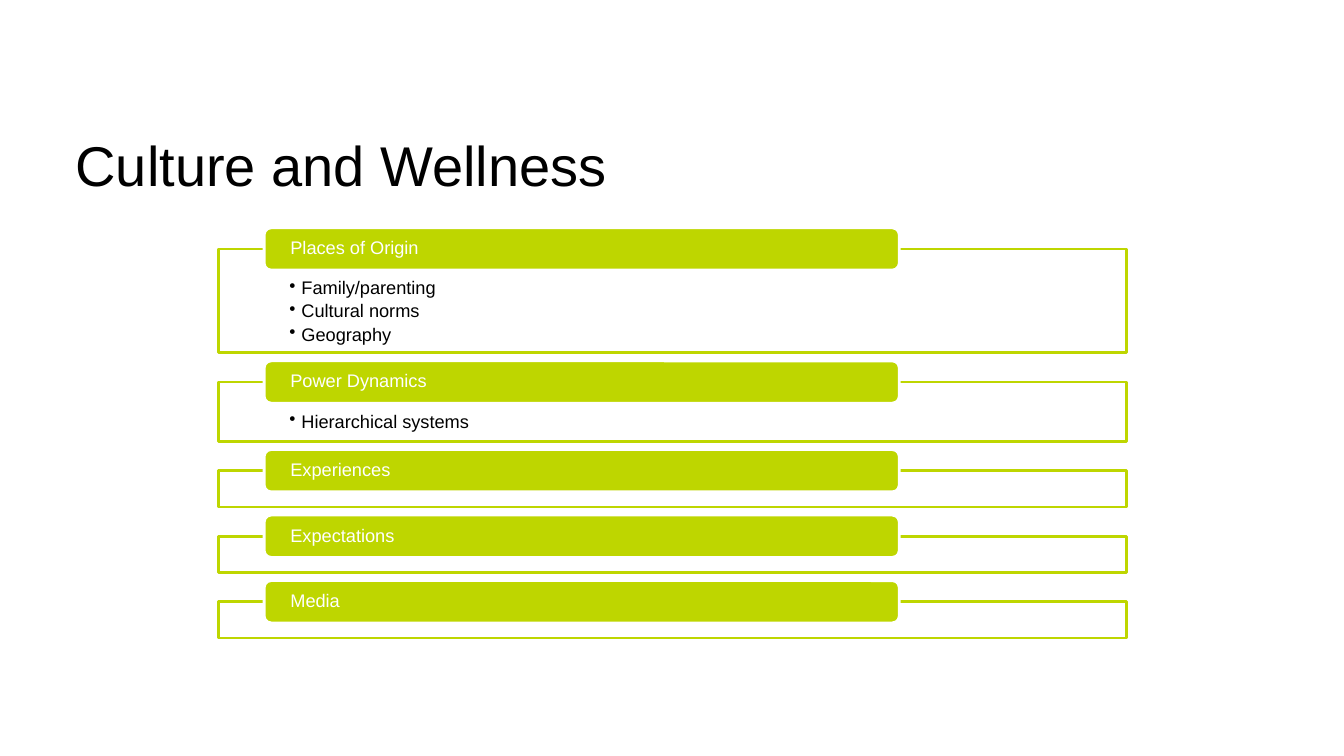
from dataclasses import dataclass

from lxml.etree import SubElement
from pptx import Presentation
from pptx.dml.color import RGBColor
from pptx.enum.shapes import MSO_SHAPE as Shape
from pptx.enum.text import MSO_ANCHOR as Anchor, PP_ALIGN as Align
from pptx.oxml.ns import qn
from pptx.util import Inches, Pt


@dataclass(frozen=True)
class Theme:
    font: str = "Arial"
    black: RGBColor = RGBColor(0, 0, 0)
    white: RGBColor = RGBColor(255, 255, 255)
    lime: RGBColor = RGBColor(0xBE, 0xD6, 0x00)
    title_size: Pt = Pt(40)
    body_size: Pt = Pt(13)
    outline: Pt = Pt(2)


theme = Theme()


def style_text(paragraph, size, color):
    paragraph.alignment = Align.LEFT
    paragraph.font.name = theme.font
    paragraph.font.size = size
    paragraph.font.color.rgb = color


def add_panel(kind, left, top, width, height, fill, line):
    panel = slide.shapes.add_shape(
        kind, Inches(left), Inches(top), Inches(width), Inches(height))
    panel.shadow.inherit = False
    panel.fill.solid()
    panel.fill.fore_color.rgb = fill
    panel.line.color.rgb = line
    panel.line.width = theme.outline
    panel.text_frame.word_wrap = True
    return panel


prs = Presentation()
prs.slide_width, prs.slide_height = Inches(13.33), Inches(7.5)
slide = prs.slides.add_slide(prs.slide_layouts[6])

# Title
title = slide.shapes.add_textbox(
    Inches(0.67), Inches(1.17), Inches(12), Inches(1.08)).text_frame
title.word_wrap = True
title.margin_left, title.margin_top = Inches(0.08), Inches(0.12)
title.text = "Culture and Wellness"
style_text(title.paragraphs[0], theme.title_size, theme.black)

# Topics: heading, frame height, points
topics = [
    ("Places of Origin", 1.03, ["Family/parenting", "Cultural norms", "Geography"]),
    ("Power Dynamics", 0.59, ["Hierarchical systems"]),
    ("Experiences", 0.36, []),
    ("Expectations", 0.36, []),
    ("Media", 0.36, []),
]
frame_top, frame_gap = 2.47, 0.29
bar_height = 0.42

for heading, frame_height, points in topics:
    # Outlined frame with its bulleted points
    frame = add_panel(Shape.RECTANGLE, 2.17, frame_top, 9, frame_height,
                      theme.white, theme.lime)
    if points:
        details = frame.text_frame
        details.vertical_anchor = Anchor.TOP
        details.margin_left = details.margin_right = Inches(0.7)
        details.margin_top, details.margin_bottom = Inches(0.3), Inches(0.1)
        details.text = "\n".join(points)
        for point in details.paragraphs:
            point.line_spacing = 0.9
            point.space_after = Pt(2.4)
            properties = point._p.get_or_add_pPr()
            properties.set("marL", str(Inches(0.12)))
            properties.set("indent", str(-Inches(0.12)))
            SubElement(properties, qn("a:buChar"), char="•")
            style_text(point, theme.body_size, theme.black)

    # Heading bar centred on the frame's top edge
    bar = add_panel(Shape.ROUNDED_RECTANGLE, 2.62, frame_top - bar_height / 2,
                    6.3, bar_height, theme.lime, theme.white)
    label = bar.text_frame
    label.vertical_anchor = Anchor.MIDDLE
    label.margin_left = label.margin_right = Inches(0.24)
    label.margin_top = label.margin_bottom = 0
    label.text = heading
    label.paragraphs[0].line_spacing = 0.9
    style_text(label.paragraphs[0], theme.body_size, theme.white)

    frame_top += frame_height + frame_gap

prs.save("out.pptx")
